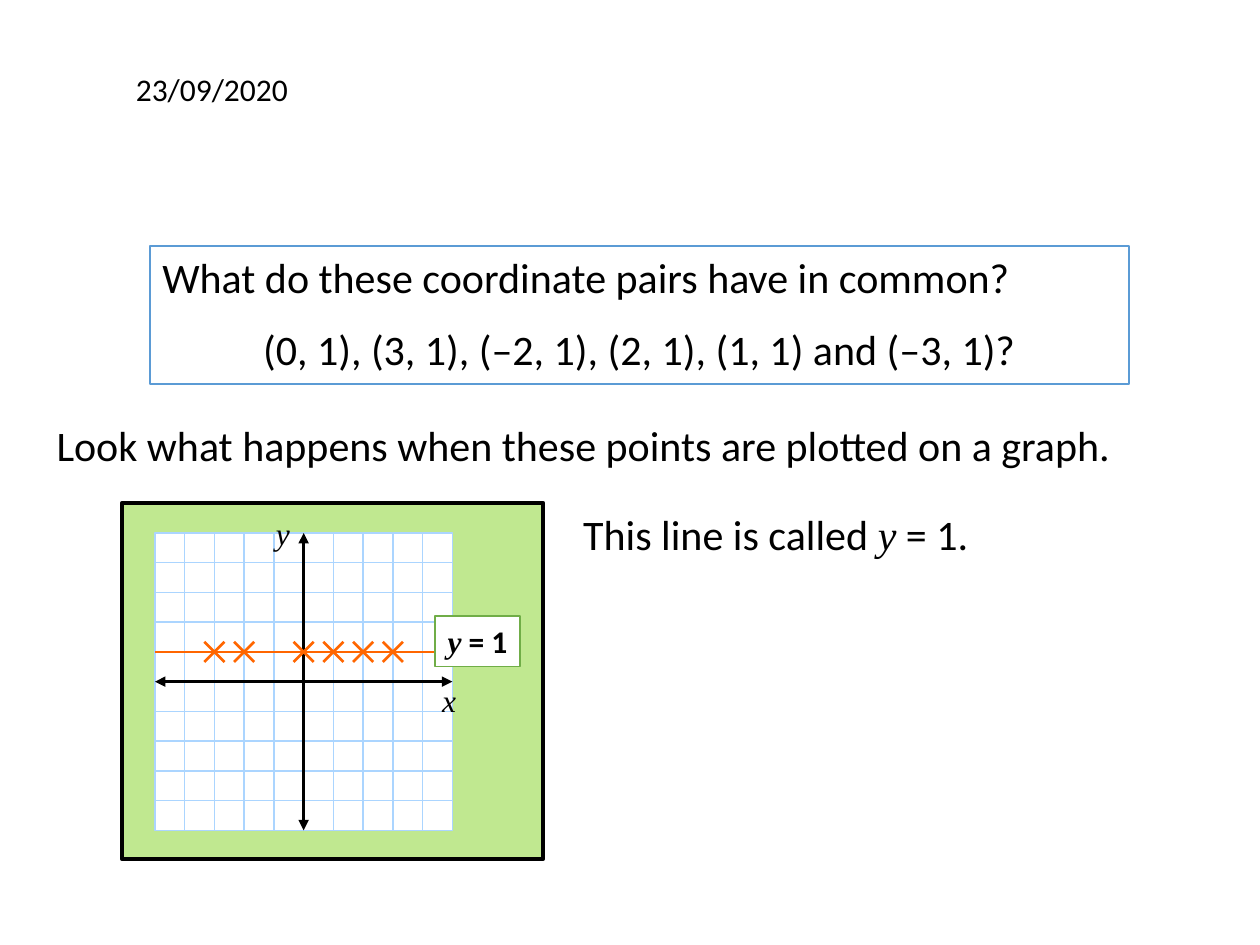
from lxml.etree import SubElement
from pptx import Presentation
from pptx.dml.color import RGBColor
from pptx.enum.shapes import MSO_CONNECTOR, MSO_SHAPE
from pptx.enum.text import MSO_ANCHOR, MSO_AUTO_SIZE, PP_ALIGN
from pptx.oxml.ns import qn
from pptx.util import Inches, Pt

COLOURS = {
    "black": "000000", "white": "FFFFFF", "question": "5B9BD5", "panel": "C0E890",
    "grid": "ABD5FF", "plot": "FF6600", "label": "70AD47",
}
BODY = {"name": "Calibri", "size": Pt(24)}
BODY_MATHS = {"name": "Times New Roman", "size": Pt(24), "italic": True}
SMALL = {"name": "Calibri", "size": Pt(18)}
SMALL_MATHS = {"name": "Times New Roman", "size": Pt(18), "italic": True}

presentation = Presentation()
presentation.slide_width = Inches(10)
presentation.slide_height = Inches(7.5)
slide = presentation.slides.add_slide(presentation.slide_layouts[6])


def add_box(box, fill=None, line=None, width=1, paragraphs=(), align=PP_ALIGN.LEFT, wrap=True):
    """Add a rectangle, or a text box if it has no fill; paragraphs are lists of (text, font)."""
    left, top, box_width, height = [Inches(value) for value in box]
    if fill:
        shape = slide.shapes.add_shape(MSO_SHAPE.RECTANGLE, left, top, box_width, height)
        shape.shadow.inherit = False
        shape.fill.solid()
        shape.fill.fore_color.rgb = RGBColor.from_string(COLOURS[fill])
        shape.line.color.rgb = RGBColor.from_string(COLOURS[line])
        shape.line.width = Pt(width)
    else:
        shape = slide.shapes.add_textbox(left, top, box_width, height)
    if paragraphs:
        frame = shape.text_frame
        frame.word_wrap = wrap
        frame.auto_size = MSO_AUTO_SIZE.SHAPE_TO_FIT_TEXT
        frame.vertical_anchor = MSO_ANCHOR.TOP
        for index, runs in enumerate(paragraphs):
            paragraph = frame.add_paragraph() if index else frame.paragraphs[0]
            paragraph.alignment = align
            for text, font in runs:
                run = paragraph.add_run()
                run.text = text
                run.font.color.rgb = RGBColor.from_string(COLOURS["black"])
                for name, value in font.items():
                    setattr(run.font, name, value)
    return shape


def add_line(start_x, start_y, end_x, end_y, colour, arrows=False):
    connector = slide.shapes.add_connector(
        MSO_CONNECTOR.STRAIGHT,
        Inches(start_x), Inches(start_y), Inches(end_x), Inches(end_y))
    connector.line.color.rgb = RGBColor.from_string(COLOURS[colour])
    connector.line.width = Pt(1.5)
    if arrows:
        outline = connector.line._get_or_add_ln()
        for end in ("a:headEnd", "a:tailEnd"):
            SubElement(outline, qn(end), type="triangle")
    SubElement(connector._element.spPr, qn("a:effectLst"))


# Date and question
add_box((0.98, 0.51, 1.42, 0.4), paragraphs=[[("23/09/2020", SMALL)]], wrap=False)
question = add_box(
    (1.19, 1.95, 7.77, 1.1), "white", "question",
    paragraphs=[
        [("What do these coordinate pairs have in common?", BODY)],
        [("(0, 1), (3, 1), (–2, 1), (2, 1), (1, 1) and (–3, 1)?", BODY)],
    ])
pairs = question.text_frame.paragraphs[1]
pairs.alignment = PP_ALIGN.CENTER
pairs.space_before = Pt(12)

# Graph paper
GRID_LEFT, GRID_TOP, GRID_SIZE, CELLS = 1.23, 4.23, 2.36, 10
cell = GRID_SIZE / CELLS
grid_right, grid_bottom = GRID_LEFT + GRID_SIZE, GRID_TOP + GRID_SIZE
origin_x, origin_y = GRID_LEFT + GRID_SIZE / 2, GRID_TOP + GRID_SIZE / 2

add_box((0.97, 3.99, 3.34, 2.83), "panel", "black", 2.25)
for row in range(CELLS):
    for column in range(CELLS):
        add_box((GRID_LEFT + column * cell, GRID_TOP + row * cell, cell, cell),
                "white", "grid", 0.75)

# Axes and their names
add_line(GRID_LEFT, origin_y, grid_right, origin_y, "black", arrows=True)
add_line(origin_x, grid_bottom, origin_x, GRID_TOP, "black", arrows=True)
for name, left, top in (("x", 3.41, 5.36), ("y", 2.09, 4.03)):
    add_box((left, top, 0.31, 0.4), paragraphs=[[(name, SMALL_MATHS)]],
            align=PP_ALIGN.CENTER, wrap=False)

# Plotted points and the line through them
POINTS = [(0, 1), (3, 1), (-2, 1), (2, 1), (1, 1), (-3, 1)]
ARM = 0.08
for x, y in POINTS:
    centre_x, centre_y = origin_x + x * cell, origin_y - y * cell
    for arm in (ARM, -ARM):
        add_line(centre_x - arm, centre_y - ARM, centre_x + arm, centre_y + ARM, "plot")
add_line(GRID_LEFT, origin_y - cell, grid_right, origin_y - cell, "plot")
add_box((3.45, 4.89, 0.68, 0.4), "white", "label",
        paragraphs=[[("y", {**SMALL_MATHS, "bold": True}), (" = 1", {**SMALL, "bold": True})]],
        align=PP_ALIGN.CENTER, wrap=False)

# Explanation
add_box((4.53, 3.99, 5.28, 0.5),
        paragraphs=[[("This line is called ", BODY), ("y", BODY_MATHS), (" = 1.", BODY)]])
add_box((0.35, 3.28, 9.39, 0.5),
        paragraphs=[[("Look what happens when these points are plotted on a graph.", BODY)]])

presentation.save("out.pptx")
